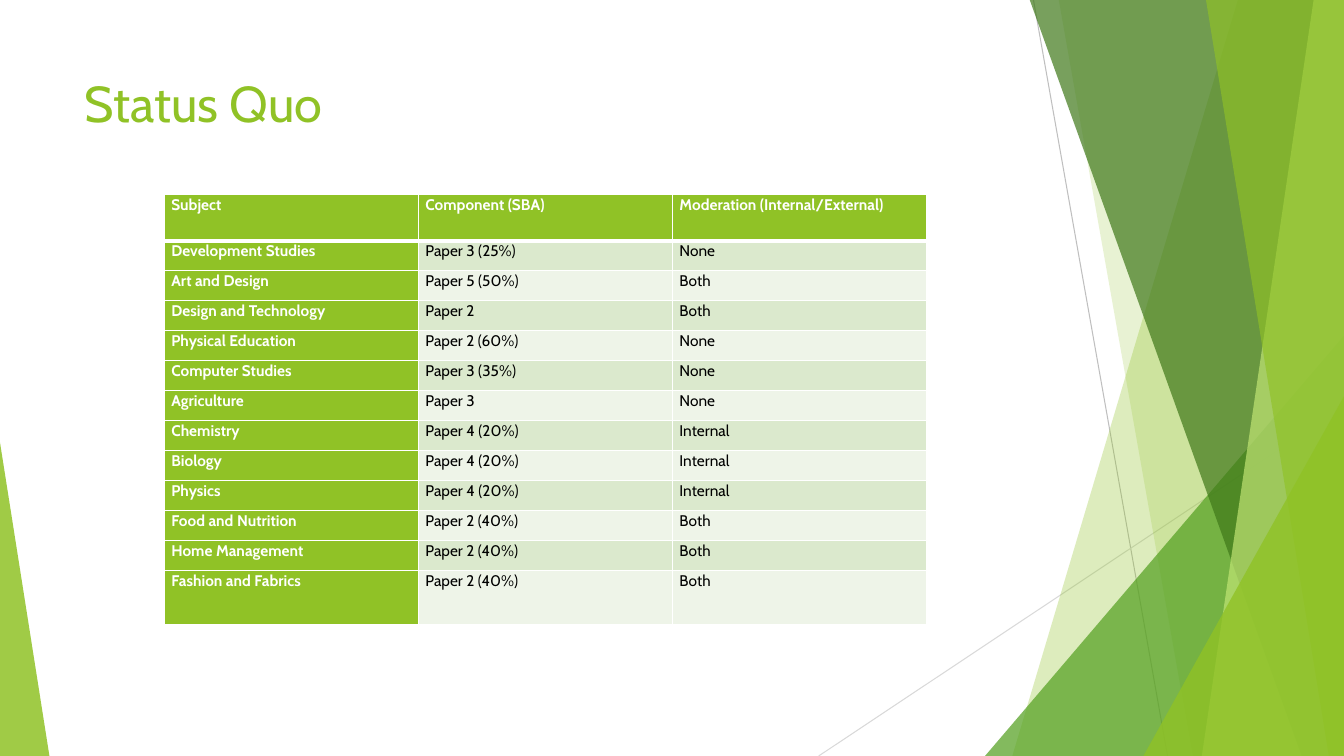
from dataclasses import dataclass

from pptx import Presentation
from pptx.dml.color import RGBColor
from pptx.enum.shapes import MSO_CONNECTOR as CONN, MSO_SHAPE as SHAPE
from pptx.enum.text import MSO_ANCHOR as ANCHOR, PP_ALIGN as ALIGN
from pptx.oxml.ns import qn
from pptx.util import Inches, Pt
from lxml.etree import SubElement


@dataclass(frozen=True)
class Theme:
    """Colours, font and type sizes of the slide."""
    green: str = "90C226"
    leaf: str = "54A021"
    forest: str = "3F7819"
    lime: str = "C0E474"
    bands: tuple = ("DBE9CD", "EEF4E8")
    white: str = "FFFFFF"
    black: str = "000000"
    font: str = "Cabin"
    title_size: int = 36
    table_size: int = 11


T = Theme()
WIDTH, HEIGHT = 13.33, 7.5
TITLE = "Status Quo"
TITLE_BOX = (0.74, 0.67, 9.4, 1.44)
ROWS = [
    ("Subject", "Component (SBA)", "Moderation (Internal/External)"),
    ("Development Studies", "Paper 3 (25%)", "None"),
    ("Art and Design", "Paper 5 (50%)", "Both"),
    ("Design and Technology", "Paper 2", "Both"),
    ("Physical Education", "Paper 2 (60%)", "None"),
    ("Computer Studies", "Paper 3 (35%)", "None"),
    ("Agriculture", "Paper 3", "None"),
    ("Chemistry", "Paper 4 (20%)", "Internal"),
    ("Biology", "Paper 4 (20%)", "Internal"),
    ("Physics", "Paper 4 (20%)", "Internal"),
    ("Food and Nutrition", "Paper 2 (40%)", "Both"),
    ("Home Management", "Paper 2 (40%)", "Both"),
    ("Fashion and Fabrics", "Paper 2 (40%)", "Both"),
]
TABLE_BOX = (1.63, 1.93, 7.56, 4.27)
HEAD_H, LAST_H = 0.46, 0.54
LINES = [((10.25, 0), (11.58, HEIGHT), "BFBFBF"),
         ((WIDTH, 4.03), (8.12, HEIGHT), "D9D9D9")]
# kind, geometry, colour, opacity in percent
RIBBONS = [
    ("band", (12.28, 10.04), T.green, 30),
    ("band", (10.5, 11.83), T.green, 20),
    ("triangle", (9.77, 3.33, 3.56, 4.17, 1), T.leaf, 72),
    ("band", (10.21, 12.91), T.forest, 70),
    ("band", (13.03, 11.92), T.lime, 70),
    ("band", (11.96, 13.18), T.green, 65),
    ("triangle", (11.34, 3.93, 1.99, 3.57, 1), T.green, 80),
    ("triangle", (0, 4.39, 0.49, 3.11, 0), T.green, 85),
]


def rgb(color):
    """Return the colour object of a hex string."""
    return RGBColor.from_string(color)


def inches(values):
    """Return the values as lengths."""
    return [Inches(v) for v in values]


def style(p, size, color, bold=False):
    """Format the runs of a paragraph."""
    for r in p.runs:
        r.font.name, r.font.size, r.font.bold = T.font, Pt(size), bold
        r.font.color.rgb = rgb(color)


def add_line(s, start, end, color):
    """Add a thin straight line."""
    line = s.shapes.add_connector(CONN.STRAIGHT, *inches(start + end))
    line.line.color.rgb, line.line.width = rgb(color), Pt(0.75)
    SubElement(line._element.spPr, qn("a:effectLst"))


def add_ribbon(s, kind, geometry, color, opacity):
    """Add a translucent band reaching the right edge, or a right triangle."""
    if kind == "band":
        top, bottom = geometry
        corners = [(top, -0.01), (WIDTH, -0.01), (WIDTH, HEIGHT), (bottom, HEIGHT)]
        points = [tuple(inches(c)) for c in corners]
        builder = s.shapes.build_freeform(*points[0])
        builder.add_line_segments(points[1:], close=True)
        sp = builder.convert_to_shape()
    else:
        sp = s.shapes.add_shape(SHAPE.ISOSCELES_TRIANGLE, *inches(geometry[:4]))
        sp.adjustments[0] = geometry[4]
    sp.shadow.inherit = False
    sp.line.fill.background()
    sp.fill.solid()
    sp.fill.fore_color.rgb = rgb(color)
    clr = sp._element.spPr.find(qn("a:solidFill"))[0]
    SubElement(clr, qn("a:alpha"), val=str(opacity * 1000))


def add_title(s):
    """Place and format the title."""
    title = s.shapes.title
    title.left, title.top, title.width, title.height = inches(TITLE_BOX)
    tf = title.text_frame
    tf.text, tf.vertical_anchor = TITLE, ANCHOR.TOP
    tf.paragraphs[0].alignment = ALIGN.LEFT
    style(tf.paragraphs[0], T.title_size, T.green)


def add_borders(cell, row):
    """Draw white cell borders, heavier under the header."""
    heavy = {(0, "lnB"), (1, "lnT")}
    for side in ("lnL", "lnR", "lnT", "lnB"):
        width = Pt(3 if (row, side) in heavy else 1)
        ln = SubElement(cell._tc.get_or_add_tcPr(), qn(f"a:{side}"), w=str(width))
        SubElement(SubElement(ln, qn("a:solidFill")), qn("a:srgbClr"), val=T.white)


def add_subjects(s):
    """Add the table of subjects."""
    n, cols = len(ROWS), len(ROWS[0])
    table = s.shapes.add_table(n, cols, *inches(TABLE_BOX)).table
    table.first_col = True
    row_h = (TABLE_BOX[3] - HEAD_H - LAST_H) / (n - 2)
    for col in table.columns:
        col.width = Inches(TABLE_BOX[2] / cols)
    for i, height in enumerate([HEAD_H] + [row_h] * (n - 2) + [LAST_H]):
        table.rows[i].height = Inches(height)
        for j, text in enumerate(ROWS[i]):
            cell, head = table.cell(i, j), i == 0 or j == 0
            cell.margin_left = cell.margin_right = Inches(0.07)
            cell.margin_top = cell.margin_bottom = 0
            add_borders(cell, i)
            cell.fill.solid()
            cell.fill.fore_color.rgb = rgb(T.green if head else T.bands[(i - 1) % 2])
            cell.text_frame.text = text
            p = cell.text_frame.paragraphs[0]
            p.alignment, p.line_spacing = ALIGN.JUSTIFY, 1.06
            style(p, T.table_size, T.white if head else T.black, head)


def main():
    """Build the slide and save it."""
    prs = Presentation()
    prs.slide_width, prs.slide_height = inches((WIDTH, HEIGHT))
    s = prs.slides.add_slide(prs.slide_layouts[5])
    for line in LINES:
        add_line(s, *line)
    for ribbon in RIBBONS:
        add_ribbon(s, *ribbon)
    add_title(s)
    add_subjects(s)
    prs.save("out.pptx")


if __name__ == "__main__":
    main()
